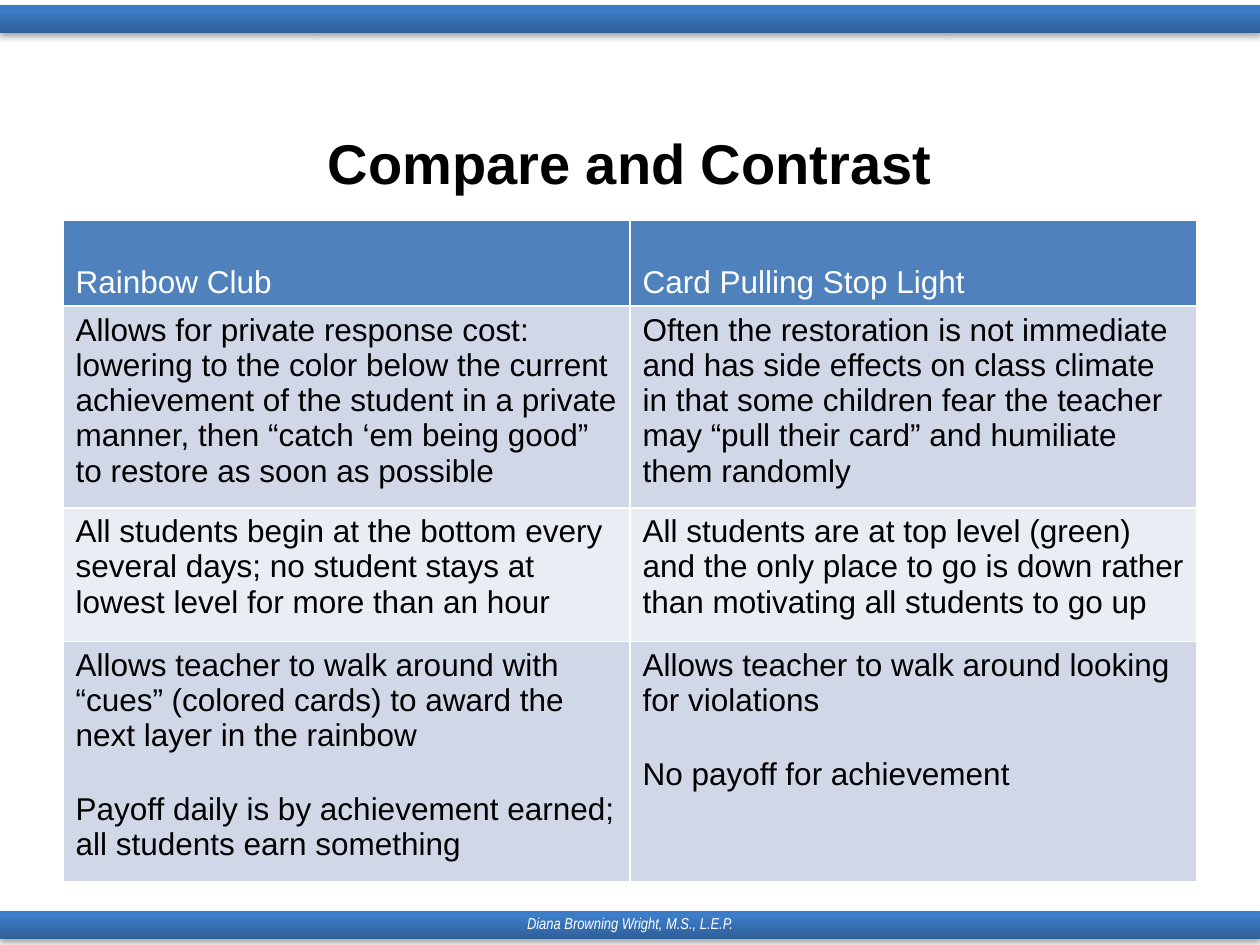
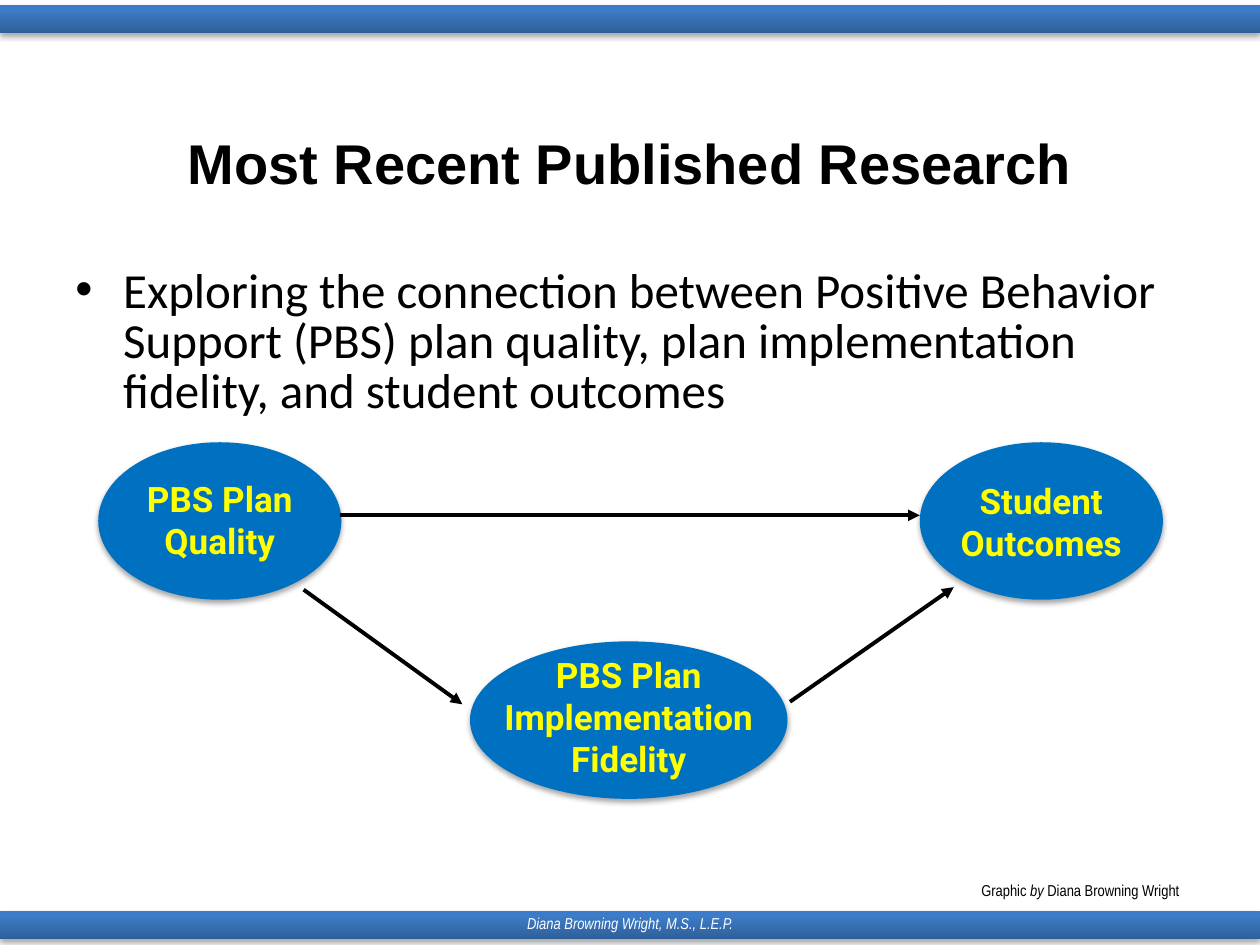
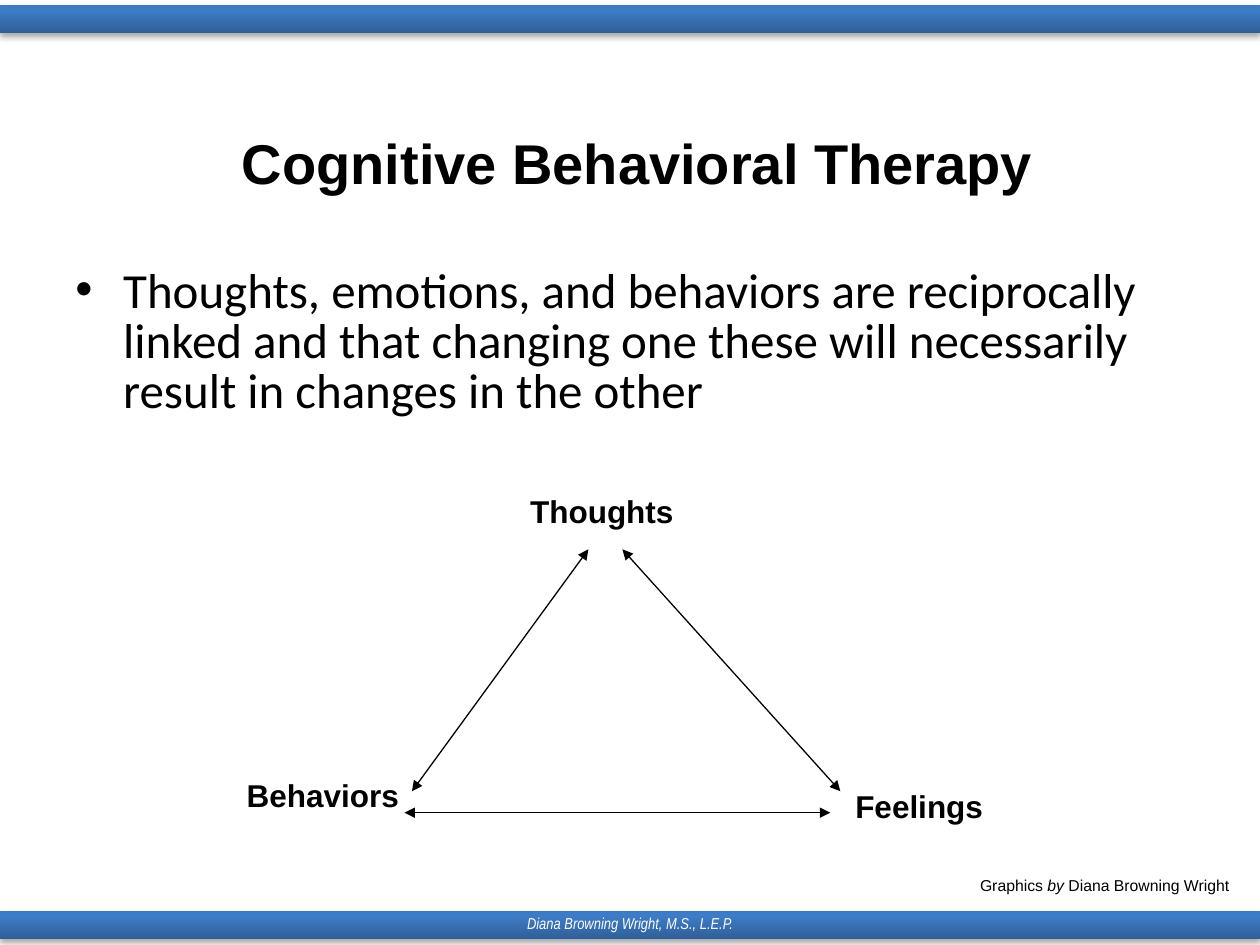
"""Build three slides on behavior support that share bands, title style and footer."""
from copy import deepcopy

from lxml import etree
from pptx import Presentation
from pptx import util as u
from pptx.dml.color import RGBColor
from pptx.enum import shapes, text
from pptx.oxml.ns import qn

COLUMNS, ROWS = 100, 75
BLACK, WHITE, YELLOW, OVAL_BLUE = "000000", "FFFFFF", "FFFF00", "0070C0"
HEADER_BLUE, BAND_DARK, BAND_LIGHT = "4F81BD", "D0D8E8", "E9EDF4"
BAR_STOPS = [(0, "2F5F99"), (0.8, "3D7CC7"), (1, "3A7CCB")]
AUTHOR = "Diana Browning Wright"


def color(value):
    """Turn a hex string into a color."""
    return RGBColor.from_string(value)


def child(parent, tag, **attributes):
    """Append a drawing element to a parent."""
    return etree.SubElement(parent, qn(f"a:{tag}"), attributes)


class SlideMaker:
    """Hold the shared style and the current slide."""

    def __init__(self):
        """Open a deck and set up its grid."""
        self.deck = Presentation()
        self.deck.slide_width, self.deck.slide_height = u.Inches(10), u.Inches(7.5)
        self.page = None

    def x(self, columns):
        """Convert grid columns to a length."""
        return round(self.deck.slide_width * columns / COLUMNS)

    def y(self, rows):
        """Convert grid rows to a length."""
        return round(self.deck.slide_height * rows / ROWS)

    def place(self, left, top, width, height):
        """Convert a grid rectangle to lengths."""
        return self.x(left), self.y(top), self.x(width), self.y(height)

    def start(self, title):
        """Add a page with its bands, title and footer."""
        self.page = self.deck.slides.add_slide(self.deck.slide_layouts[6])
        for top in (72.3, 0.4):
            self.bar(top)
        box = self.text((5, 9.2, 90, 8.3), title, 32, bold=True, centered=True, middle=True)
        box.text_frame.paragraphs[0].line_spacing = 0.8
        self.text((33.1, 71.3, 33.8, 4), f"{AUTHOR}, M.S., L.E.P.", 9, "Arial Narrow",
                  WHITE, italic=True, centered=True, middle=True)

    def shape(self, kind, at):
        """Add a borderless shape with a soft shadow below it."""
        shape = self.page.shapes.add_shape(kind, *self.place(*at))
        shape.line.fill.background()
        shape.shadow.inherit = False
        effects = shape.element.spPr.find(qn("a:effectLst"))
        shadow = child(effects, "outerShdw", blurRad="40000", dist="23000",
                       dir="5400000", rotWithShape="0")
        child(child(shadow, "srgbClr", val=BLACK), "alpha", val="35000")
        return shape

    def bar(self, top):
        """Add a full-width gradient band."""
        bar = self.shape(shapes.MSO_SHAPE.RECTANGLE, (0, top, COLUMNS, 2.2))
        bar.fill.gradient()
        bar.fill.gradient_angle = 90
        stops = bar.element.spPr.find(f".//{qn('a:gsLst')}")
        stops.append(deepcopy(stops[-1]))
        for stop, (position, shade) in zip(bar.fill.gradient_stops, BAR_STOPS):
            stop.position = position
            stop.color.rgb = color(shade)

    def oval(self, at):
        """Add a blue oval."""
        oval = self.shape(shapes.MSO_SHAPE.OVAL, at)
        oval.fill.solid()
        oval.fill.fore_color.rgb = color(OVAL_BLUE)

    def font(self, para, size, name="Arial", shade=BLACK, bold=False, italic=None):
        """Set the font of a paragraph."""
        font = para.font
        font.size, font.name, font.bold, font.italic = u.Pt(size), name, bold, italic
        font.color.rgb = color(shade)

    def text(self, at, content, size, name="Arial", shade=BLACK, bold=False,
             italic=None, centered=False, middle=False):
        """Add a wrapping text box of one paragraph."""
        box = self.page.shapes.add_textbox(*self.place(*at))
        frame = box.text_frame
        frame.word_wrap = True
        if middle:
            frame.vertical_anchor = text.MSO_ANCHOR.MIDDLE
        para = frame.paragraphs[0]
        para.text = content
        if centered:
            para.alignment = text.PP_ALIGN.CENTER
        self.font(para, size, name, shade, bold, italic)
        return box

    def bullet(self, content):
        """Add the bulleted body text."""
        box = self.text((5, 20.8, 90, 49.2), "", 28, "Calibri")
        para = box.text_frame.paragraphs[0]
        para.text = content
        para.line_spacing = 0.85
        properties = para._p.get_or_add_pPr()
        indent = u.Inches(0.38)
        properties.set("marL", str(indent))
        properties.set("indent", str(-indent))
        mark = properties.find(qn("a:defRPr"))
        for tag, attributes in (("buFont", {"typeface": "Arial"}), ("buChar", {"char": "•"})):
            mark.addprevious(child(properties, tag, **attributes))

    def credit(self, at, kind, name):
        """Add the line that credits the author of the drawing."""
        box = self.text(at, "", 9, name)
        frame = box.text_frame
        frame.word_wrap = False
        frame.auto_size = text.MSO_AUTO_SIZE.SHAPE_TO_FIT_TEXT
        for words, slanted in ((f"{kind} ", False), ("by", True), (f" {AUTHOR}", False)):
            span = frame.paragraphs[0].add_run()
            span.text = words
            span.font.italic = slanted

    def arrow(self, start, end, width, both=False):
        """Add a straight arrow with one or two heads."""
        (left, top), (right, bottom) = start, end
        arrow = self.page.shapes.add_connector(
            shapes.MSO_CONNECTOR.STRAIGHT, self.x(left), self.y(top), self.x(right), self.y(bottom))
        arrow.line.width = u.Pt(width)
        arrow.line.color.rgb = color(BLACK)
        properties = arrow.element.spPr
        for tag in ("headEnd", "tailEnd") if both else ("tailEnd",):
            child(properties.find(qn("a:ln")), tag, type="triangle")
        child(properties, "effectLst")

    def table(self, left, top, width, heights, rows):
        """Add a banded table; each cell is a list of paragraphs."""
        table = self.page.shapes.add_table(
            len(rows), len(rows[0]), *self.place(left, top, width, sum(heights))).table
        table.first_row = table.horz_banding = False
        for index, (cells, height) in enumerate(zip(rows, heights)):
            table.rows[index].height = self.y(height)
            header = index == 0
            fill = HEADER_BLUE if header else BAND_DARK if index % 2 else BAND_LIGHT
            for column, paragraphs in enumerate(cells):
                cell = table.cell(index, column)
                self.cell(cell, paragraphs, fill, WHITE if header else BLACK)
                if header:
                    cell.vertical_anchor = text.MSO_ANCHOR.BOTTOM

    def cell(self, cell, paragraphs, fill, shade):
        """Write, border and fill one table cell."""
        properties = cell._tc.get_or_add_tcPr()
        for side in "LRTB":
            border = child(properties, f"ln{side}", w=str(u.Pt(1)))
            child(child(border, "solidFill"), "srgbClr", val=WHITE)
        cell.fill.solid()
        cell.fill.fore_color.rgb = color(fill)
        cell.text_frame.text = "\n".join(paragraphs)
        for number, para in enumerate(cell.text_frame.paragraphs):
            if number:
                para.space_before = u.Pt(22)
            self.font(para, 18, shade=shade)


def compare(maker):
    """Build the comparison table."""
    maker.start("Compare and Contrast")
    maker.table(5, 17.5, 90, (6.8, 15, 10.6, 18), [
        (["Rainbow Club"], ["Card Pulling Stop Light"]),
        (["Allows for private response cost: lowering to the color below the current achievement "
          "of the student in a private manner, then “catch ‘em being good” to restore as soon "
          "as possible"],
         ["Often the restoration is not immediate and has side effects on class climate in that "
          "some children fear the teacher may “pull their card” and humiliate them randomly"]),
        (["All students begin at the bottom every several days; no student stays at lowest level "
          "for more than an hour"],
         ["All students are at top level (green) and the only place to go is down rather than "
          "motivating all students to go up"]),
        (["Allows teacher to walk around with “cues” (colored cards) to award the next layer in "
          "the rainbow",
          "Payoff daily is by achievement earned; all students earn something"],
         ["Allows teacher to walk around looking for violations", "No payoff for achievement"]),
    ])


def research(maker):
    """Build the plan quality diagram."""
    maker.start("Most Recent Published Research")
    maker.bullet("Exploring the connection between Positive Behavior Support (PBS) plan quality, "
                 "plan implementation fidelity, and student outcomes")
    for left, top, width, label_top, label in (
            (7.8, 35.1, 19.3, 37.4, "PBS Plan Quality"),
            (37.3, 50.9, 25.2, 51.4, "PBS Plan Implementation Fidelity"),
            (73, 35.1, 19.3, 37.6, "Student Outcomes")):
        maker.oval((left, top, width, 12.5))
        maker.text((left, label_top, width, 7.7), label, 20, "Roboto", YELLOW,
                   bold=True, centered=True)
    for start, end in (((62.7, 55.7), (75.7, 46.6)), ((24.1, 46.8), (36.7, 55.9)),
                       ((27, 40.9), (73, 40.9))):
        maker.arrow(start, end, 2.25)
    maker.credit((76.9, 69.4, 17.9, 2.5), "Graphic", "Arial Narrow")


def therapy(maker):
    """Build the triangle of thoughts, feelings and behaviors."""
    maker.start(" Cognitive Behavioral Therapy")
    maker.bullet("Thoughts, emotions, and behaviors are reciprocally linked and that changing one "
                 "these will necessarily result in changes in the other")
    for start, end in (((49.4, 43.6), (66.7, 62.8)), ((46.7, 43.6), (32.7, 62.8)),
                       ((32.1, 64.5), (65.9, 64.5))):
        maker.arrow(start, end, 0.75, both=True)
    for left, top, label in ((41.1, 38.6, "Thoughts"), (66.9, 62, "Feelings"),
                             (18.6, 61.1, "Behaviors")):
        maker.text((left, top, 17, 4), label, 18, bold=True)
    maker.credit((76.8, 69, 22, 2.5), "Graphics", "Arial")


def main():
    """Build and save the deck."""
    maker = SlideMaker()
    for build in (compare, research, therapy):
        build(maker)
    maker.deck.save("out.pptx")


if __name__ == "__main__":
    main()
